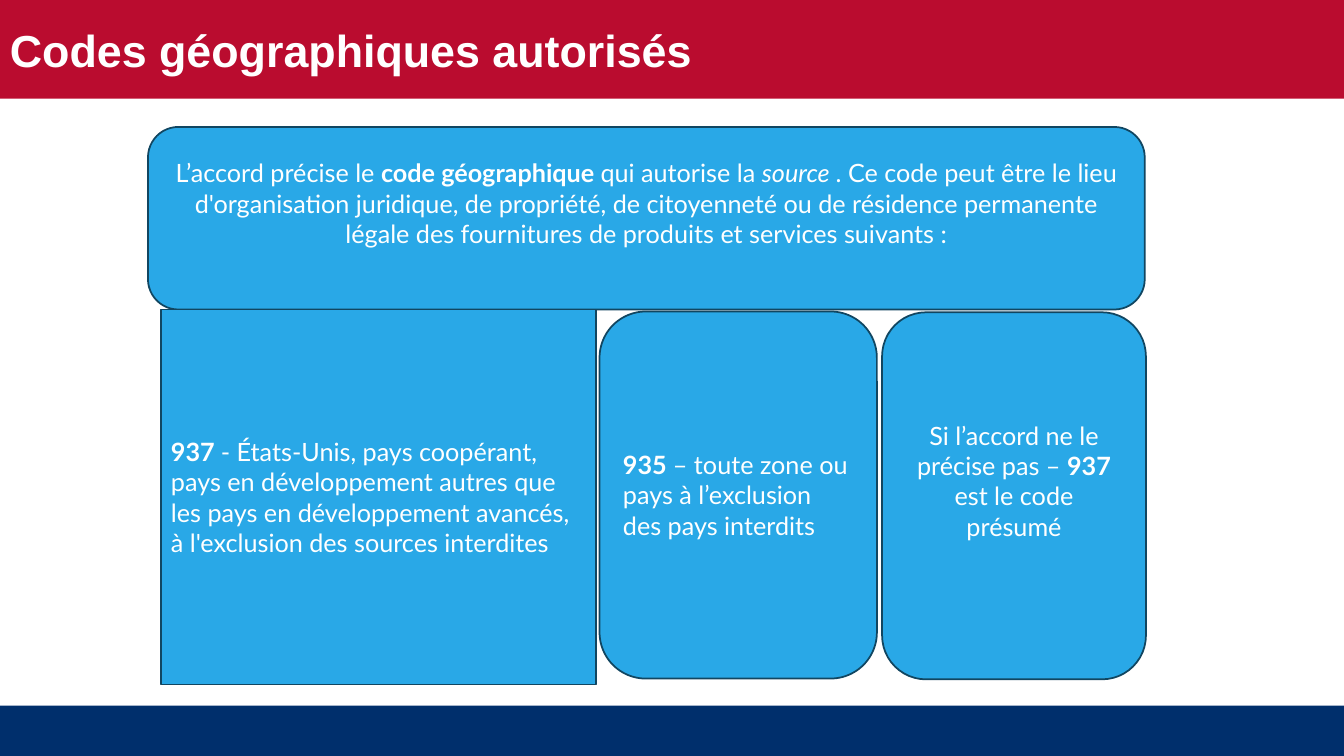
"""Build the slide on authorised geographic codes."""
from dataclasses import dataclass

from pptx import Presentation
from pptx.dml.color import RGBColor
from pptx.enum.shapes import MSO_SHAPE
from pptx.enum.text import MSO_ANCHOR, PP_ALIGN
from pptx.slide import Slide
from pptx.util import Cm, Pt

RECTANGLE = MSO_SHAPE.RECTANGLE
ROUNDED = MSO_SHAPE.ROUNDED_RECTANGLE
LEFT = PP_ALIGN.LEFT
CENTER = PP_ALIGN.CENTER
MIDDLE = MSO_ANCHOR.MIDDLE

WHITE = RGBColor(0xFF, 0xFF, 0xFF)
NAVY = RGBColor(0x00, 0x2F, 0x6C)
RED = RGBColor(0xBA, 0x0C, 0x2F)
SKY = RGBColor(0x29, 0xA8, 0xE7)
OUTLINE = RGBColor(0x11, 0x46, 0x61)

SLIDE_WIDTH = 33.87
SLIDE_HEIGHT = 19.05
FOOTER_HEIGHT = 1.27
EMPTY_LINE = 0.76


@dataclass(frozen=True)
class Span:
    text: str
    bold: bool = False
    italic: bool = False


@dataclass(frozen=True)
class Box:
    left: float
    top: float
    width: float
    height: float
    spans: tuple[Span, ...] = ()
    alignment: PP_ALIGN = LEFT
    geometry: MSO_SHAPE = ROUNDED
    fill: RGBColor = SKY
    outline: RGBColor | None = OUTLINE
    font_name: str = "Lato"
    font_size: int = 18
    space_below: float = 0


FOOTER = Box(0, SLIDE_HEIGHT - FOOTER_HEIGHT, SLIDE_WIDTH, FOOTER_HEIGHT,
             geometry=RECTANGLE, fill=NAVY, outline=None)
TITLE = Box(0, 0, SLIDE_WIDTH, 2.49, (Span("Codes géographiques autorisés", bold=True),),
            geometry=RECTANGLE, fill=RED, outline=None, font_name="Arial", font_size=32)
AGREEMENT = Box(3.73, 3.2, 25.12, 4.6, (
    Span("L’accord précise le "),
    Span("code géographique ", bold=True),
    Span("qui autorise la "),
    Span("source ", italic=True),
    Span(". Ce code peut être le lieu d'organisation juridique, de propriété, "
         "de citoyenneté ou de résidence permanente légale des fournitures "
         "de produits et services suivants :"),
), CENTER, space_below=EMPTY_LINE)
CODE_937 = Box(4.06, 7.8, 10.97, 9.45, (
    Span("937 ", bold=True),
    Span("- États-Unis, pays coopérant, pays en développement autres que les pays "
         "en développement avancés, à l'exclusion des sources interdites"),
), geometry=RECTANGLE)
CODE_935 = Box(15.11, 7.85, 6.99, 9.25, (
    Span("935 ", bold=True),
    Span("– toute zone ou pays à l’exclusion des pays interdits"),
))
DEFAULT_CODE = Box(22.23, 7.87, 6.65, 9.25, (
    Span("Si l’accord ne le précise pas – "),
    Span("937 ", bold=True),
    Span("est le code présumé"),
), CENTER, space_below=EMPTY_LINE)
BOXES = (FOOTER, TITLE, AGREEMENT, CODE_937, CODE_935, DEFAULT_CODE)


def draw_box(slide: Slide, box: Box) -> None:
    """Draw one filled box with its text."""
    shape = slide.shapes.add_shape(
        box.geometry, Cm(box.left), Cm(box.top), Cm(box.width), Cm(box.height))
    shape.shadow.inherit = False
    shape.fill.solid()
    shape.fill.fore_color.rgb = box.fill
    if box.outline is None:
        shape.line.fill.background()
    else:
        shape.line.color.rgb = box.outline
        shape.line.width = Pt(1.25)
    if not box.spans:
        return
    frame = shape.text_frame
    frame.word_wrap = True
    frame.vertical_anchor = MIDDLE
    frame.margin_bottom = Cm(0.13 + box.space_below)
    paragraph = frame.paragraphs[0]
    paragraph.alignment = box.alignment
    paragraph.font.name = box.font_name
    paragraph.font.size = Pt(box.font_size)
    paragraph.font.color.rgb = WHITE
    for span in box.spans:
        run = paragraph.add_run()
        run.text = span.text
        run.font.bold = span.bold
        run.font.italic = span.italic


def main() -> None:
    """Create the presentation and save it."""
    presentation = Presentation()
    presentation.slide_width = Cm(SLIDE_WIDTH)
    presentation.slide_height = Cm(SLIDE_HEIGHT)
    slide = presentation.slides.add_slide(presentation.slide_layouts[6])
    for box in BOXES:
        draw_box(slide, box)
    presentation.save("out.pptx")


if __name__ == "__main__":
    main()
